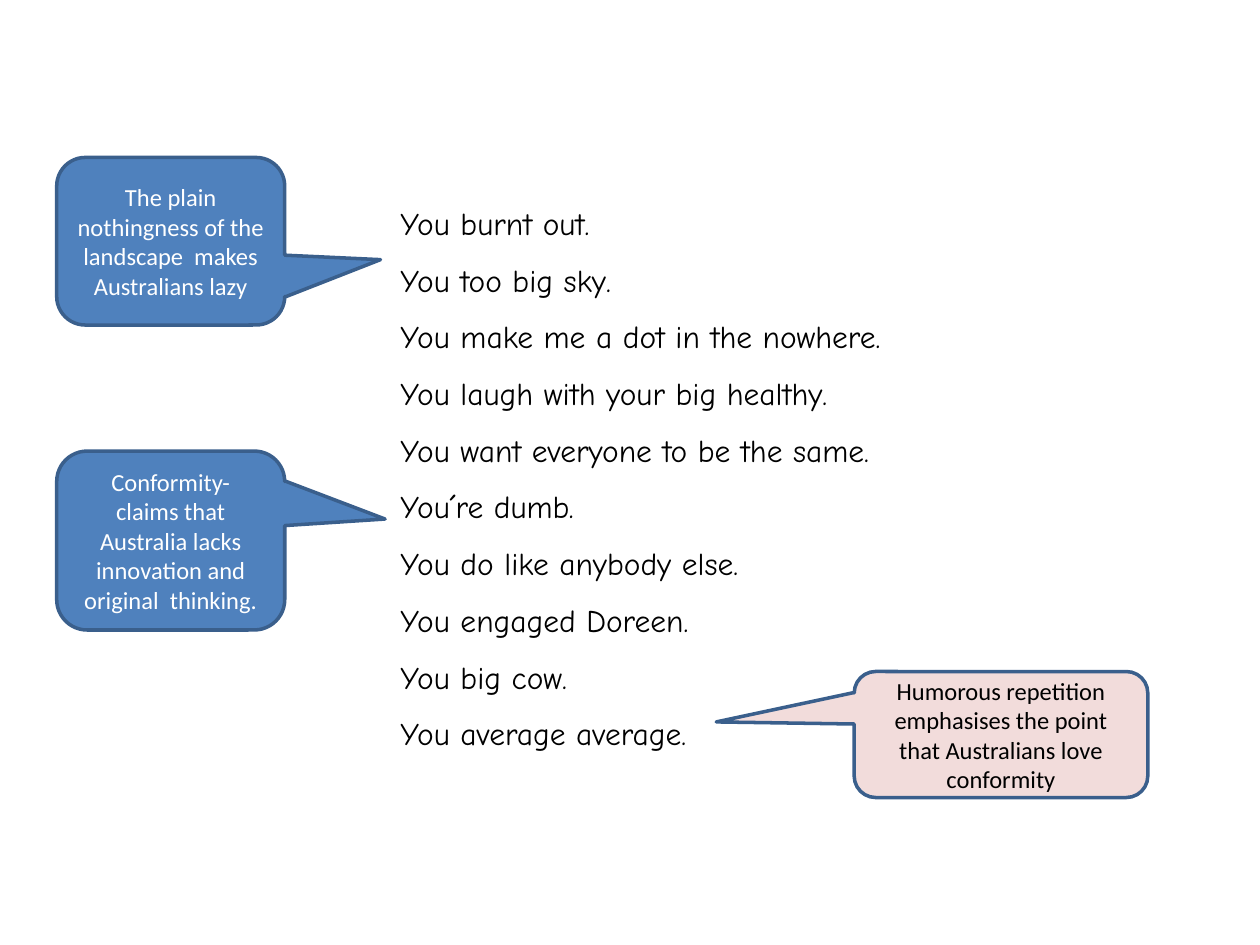
"""Build a slide of a poem with three callouts that comment on it."""
from pptx import Presentation
from pptx.dml.color import RGBColor
from pptx.enum.shapes import MSO_SHAPE
from pptx.enum.text import MSO_ANCHOR, PP_ALIGN
from pptx.util import Inches, Pt

COLORS = {"blue": "4F81BD", "edge": "3A5F8C", "pink": "F2DCDB",
          "white": "FFFFFF", "black": "000000"}

POEM = [
    "You burnt out.",
    "You too big sky.",
    "You make me a dot in the nowhere.",
    "You laugh with your big healthy.",
    "You want everyone to be the same.",
    "You´re dumb.",
    "You do like anybody else.",
    "You engaged Doreen.",
    "You big cow.",
    "You average average.",
]

NOTES = [
    {"lines": ["Conformity-",
               "claims that Australia lacks innovation and original  thinking."],
     "box": (0.45, 3.58, 1.81, 1.42), "tip": (0.94, -0.12),
     "fill": "blue", "ink": "white"},
    {"lines": ["The plain nothingness of the landscape  makes Australians lazy"],
     "box": (0.45, 1.25, 1.81, 1.33), "tip": (0.92, 0.11),
     "fill": "blue", "ink": "white"},
    {"lines": ["Humorous repetition emphasises the point that Australians love conformity"],
     "box": (6.78, 5.33, 2.33, 1), "tip": (-0.97, -0.1),
     "fill": "pink", "ink": "black"},
]


def shade(name):
    return RGBColor.from_string(COLORS[name])


def write(frame, lines, font="Calibri", size=14, ink="black",
          align=PP_ALIGN.CENTER, anchor=MSO_ANCHOR.MIDDLE, space=1.0):
    frame.word_wrap = True
    frame.vertical_anchor = anchor
    for i, line in enumerate(lines):
        para = frame.add_paragraph() if i else frame.paragraphs[0]
        para.alignment = align
        para.line_spacing = space
        run = para.add_run()
        run.text = line
        run.font.name = font
        run.font.size = Pt(size)
        run.font.color.rgb = shade(ink)


def add_note(slide, note):
    shape = slide.shapes.add_shape(MSO_SHAPE.ROUNDED_RECTANGULAR_CALLOUT,
                                   *map(Inches, note["box"]))
    shape.shadow.inherit = False
    for i, value in enumerate((*note["tip"], 0.17)):
        shape.adjustments[i] = value
    shape.fill.solid()
    shape.fill.fore_color.rgb = shade(note["fill"])
    shape.line.color.rgb = shade("edge")
    shape.line.width = Pt(2)
    write(shape.text_frame, note["lines"], ink=note["ink"])


def main():
    deck = Presentation()
    deck.slide_width, deck.slide_height = Inches(10), Inches(7.5)
    slide = deck.slides.add_slide(deck.slide_layouts[6])
    poem = slide.shapes.add_textbox(*map(Inches, (3.08, 1.42, 5, 4.64)))
    write(poem.text_frame, POEM, font="Comic Neue", size=18,
          align=PP_ALIGN.LEFT, anchor=MSO_ANCHOR.TOP, space=1.5)
    for note in NOTES:
        add_note(slide, note)
    deck.save("out.pptx")


if __name__ == "__main__":
    main()
